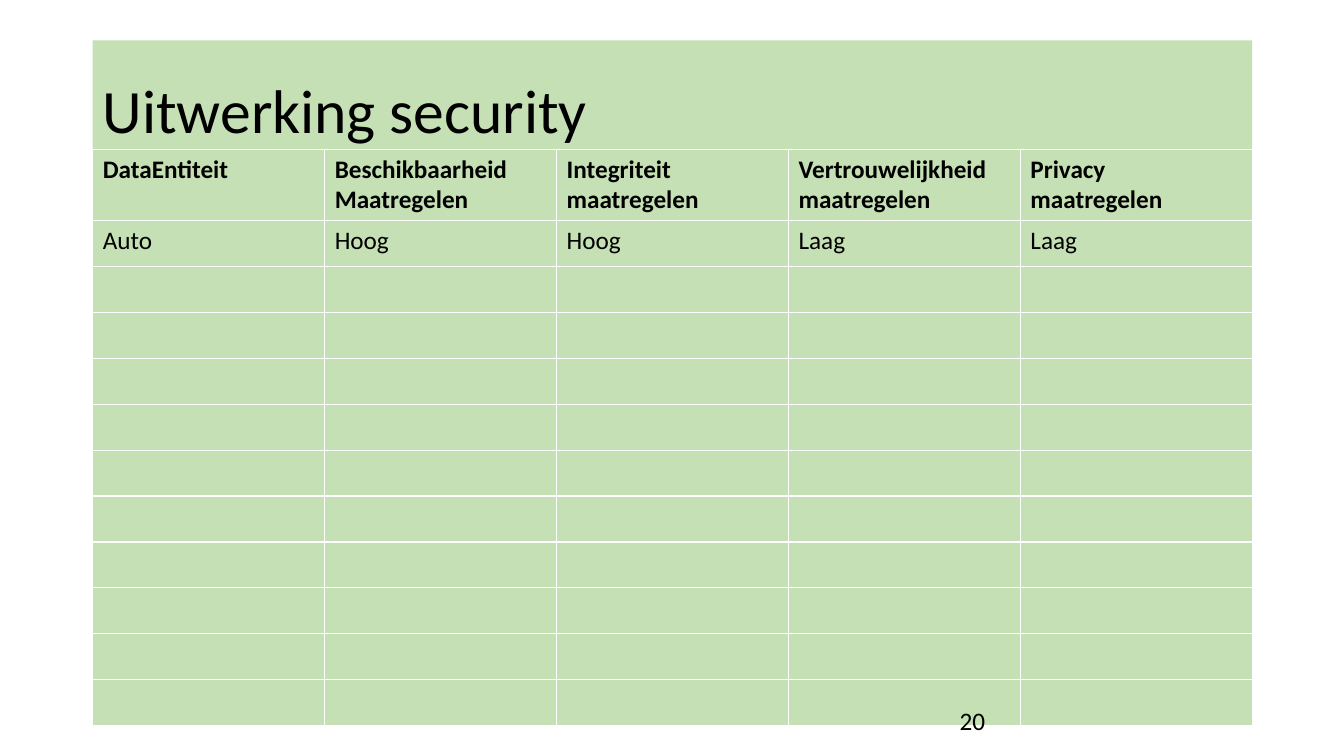
"""Build the security measures slide with its title band and table."""
from pptx import Presentation
from pptx.dml.color import RGBColor
from pptx.enum.shapes import MSO_SHAPE
from pptx.enum.text import MSO_ANCHOR, PP_ALIGN
from pptx.util import Inches, Pt

GREEN, BLACK = "C5E0B4", "000000"
ROWS = 12
HEAD = 0.7
BODY = (5.71 - HEAD) / (ROWS - 1)
TEXTS = [
    ["DataEntiteit", "Beschikbaarheid\nMaatregelen", "Integriteit\nmaatregelen",
     "Vertrouwelijkheid\nmaatregelen", "Privacy\nmaatregelen"],
    ["Auto", "Hoog", "Hoog", "Laag", "Laag"],
]


def paint(fill, color):
    fill.solid()
    fill.fore_color.rgb = RGBColor.from_string(color)


def write(frame, text, size=18, bold=False):
    for i, line in enumerate(text.split("\n")):
        para = frame.add_paragraph() if i else frame.paragraphs[0]
        para.alignment = PP_ALIGN.LEFT
        run = para.add_run()
        run.text = line
        run.font.name = "Calibri"
        run.font.size = Pt(size)
        run.font.bold = bold
        paint(run.font.fill, BLACK)


prs = Presentation()
prs.slide_width, prs.slide_height = Inches(13.33), Inches(7.5)
slide = prs.slides.add_slide(prs.slide_layouts[6])
shapes = slide.shapes

title = shapes.add_shape(MSO_SHAPE.RECTANGLE, Inches(0.92), Inches(0.4),
                         Inches(11.5), Inches(1.45))
title.shadow.inherit = False
paint(title.fill, GREEN)
title.line.fill.background()
title.text_frame.word_wrap = True
title.text_frame.vertical_anchor = MSO_ANCHOR.MIDDLE
write(title.text_frame, "Uitwerking security", 44)
title.text_frame.paragraphs[0].line_spacing = 0.9

table = shapes.add_table(ROWS, len(TEXTS[0]), Inches(0.92), Inches(1.48),
                         Inches(11.5), Inches(5.71)).table
for col in table.columns:
    col.width = Inches(2.3)

for r, row in enumerate(table.rows):
    row.height = Inches(BODY if r else HEAD)
    for c, cell in enumerate(row.cells):
        paint(cell.fill, GREEN)
        if r < len(TEXTS):
            write(cell.text_frame, TEXTS[r][c], bold=r == 0)

number = shapes.add_textbox(Inches(9.42), Inches(6.95), Inches(3), Inches(0.4))
number.text_frame.word_wrap = True
write(number.text_frame, "20")

prs.save("out.pptx")
